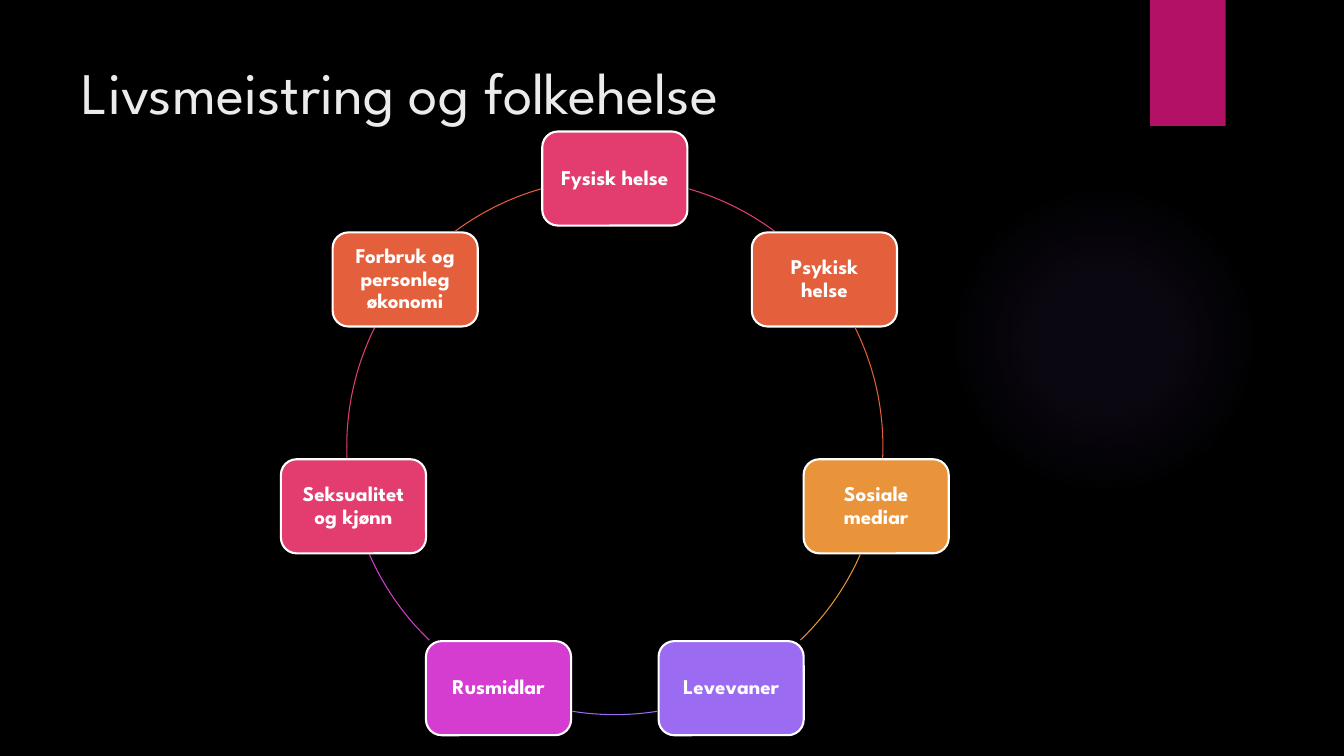
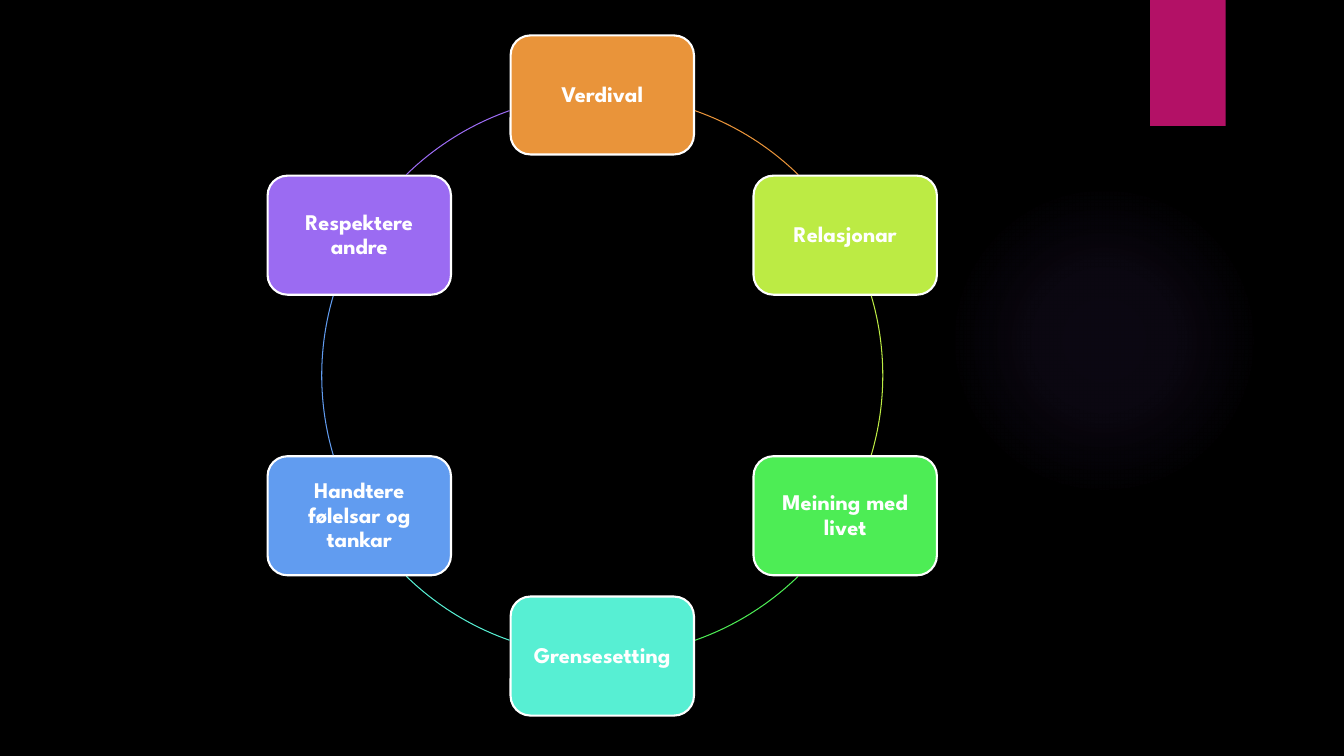
import itertools
import math

import lxml.etree
import pptx
import pptx.dml.color
import pptx.enum.shapes
import pptx.enum.text
import pptx.oxml
import pptx.oxml.ns
import pptx.util

Pt = pptx.util.Pt
SHAPE = pptx.enum.shapes.MSO_SHAPE
FONT = "League Spartan"
BLACK, WHITE, TITLE_COLOUR, BAND = "000000", "FFFFFF", "EBEBEB", "B31166"
PINK, RED, ORANGE, VIOLET, MAGENTA = "E33D6F", "E45F3C", "E9943A", "9B6BF2", "D53DD0"
LIME, GREEN, TURQUOISE, BLUE = "BCEB44", "4DED55", "57EFD3", "619CF0"
GLOW_STOPS = [(0, 7), (36, 6), (69, 0)]
TITLE_ONLY, BLANK = 5, 6

CYCLES = [
    {
        "title": "Livsmeistring og folkehelse",
        "centre": (439.2, 319),
        "radius": 191.5,
        "box": (103.7, 67.2),
        "inset": 7.5,
        "size": 15,
        "topics": [
            ("Fysisk helse", PINK),
            ("Psykisk helse", RED),
            ("Sosiale mediar", ORANGE),
            ("Levevaner", VIOLET),
            ("Rusmidlar", MAGENTA),
            ("Seksualitet og kjønn", PINK),
            ("Forbruk og personleg økonomi", RED),
        ],
    },
    {
        "title": None,
        "centre": (430.2, 268.2),
        "radius": 200.4,
        "box": (131, 85),
        "inset": 9,
        "size": 16,
        "topics": [
            ("Verdival", ORANGE),
            ("Relasjonar", LIME),
            ("Meining med livet", GREEN),
            ("Grensesetting", TURQUOISE),
            ("Handtere følelsar og tankar", BLUE),
            ("Respektere andre", VIOLET),
        ],
    },
]


def colour(value):
    return pptx.dml.color.RGBColor.from_string(value)


def add_shape(slide, kind, left, top, width, height, fill=None, line=None, weight=0):
    shape = slide.shapes.add_shape(kind, Pt(left), Pt(top), Pt(width), Pt(height))
    shape.shadow.inherit = False
    if fill:
        shape.fill.solid()
        shape.fill.fore_color.rgb = colour(fill)
    else:
        shape.fill.background()
    if line:
        shape.line.color.rgb = colour(line)
        shape.line.width = Pt(weight)
    else:
        shape.line.fill.background()
    return shape


def add_text(frame, text, size, text_colour, bold=False):
    paragraph = frame.paragraphs[0]
    run = paragraph.add_run()
    run.text = text
    run.font.name = FONT
    run.font.size = Pt(size)
    run.font.bold = bold
    run.font.color.rgb = colour(text_colour)
    return paragraph


def fill_glow(shape):
    stops = "".join(
        f'<a:gs pos="{position * 1000}"><a:srgbClr val="{VIOLET}">'
        f'<a:alpha val="{alpha * 1000}"/></a:srgbClr></a:gs>'
        for position, alpha in GLOW_STOPS
    )
    gradient = pptx.oxml.parse_xml(
        f'<a:gradFill {pptx.oxml.ns.nsdecls("a")}><a:gsLst>{stops}</a:gsLst>'
        '<a:path path="circle"><a:fillToRect l="50000" t="50000" r="50000" b="50000"/>'
        "</a:path></a:gradFill>"
    )
    properties = shape.element.spPr
    properties.replace(properties.find(pptx.oxml.ns.qn("a:noFill")), gradient)


def decorate_master(master, slide):
    master.background.fill.solid()
    master.background.fill.fore_color.rgb = colour(BLACK)
    glow = add_shape(slide, SHAPE.OVAL, 677.5, 131.8, 221.8, 221.8)
    fill_glow(glow)
    band = add_shape(slide, SHAPE.RECTANGLE, 821.5, 0, 54, 90, BAND)
    for index, shape in enumerate((glow, band), start=2):
        master.shapes.element.insert(index, shape.element)


def add_title(slide, text):
    title = slide.shapes.title
    title.left, title.top, title.width, title.height = Pt(51), Pt(36), Pt(741), Pt(58)
    title.text_frame.vertical_anchor = pptx.enum.text.MSO_ANCHOR.BOTTOM
    paragraph = add_text(title.text_frame, text, 42, TITLE_COLOUR)
    paragraph.alignment = pptx.enum.text.PP_ALIGN.LEFT


def add_topic(slide, cycle, angle, text, fill):
    width, height = cycle["box"]
    left = cycle["centre"][0] + cycle["radius"] * math.cos(math.radians(angle)) - width / 2
    top = cycle["centre"][1] + cycle["radius"] * math.sin(math.radians(angle)) - height / 2
    box = add_shape(slide, SHAPE.ROUNDED_RECTANGLE, left, top, width, height, fill, WHITE, 1.5)
    frame = box.text_frame
    frame.word_wrap = True
    frame.vertical_anchor = pptx.enum.text.MSO_ANCHOR.MIDDLE
    frame.margin_left = frame.margin_right = Pt(cycle["inset"])
    frame.margin_top = frame.margin_bottom = Pt(cycle["inset"])
    paragraph = add_text(frame, text, cycle["size"], WHITE, True)
    paragraph.alignment = pptx.enum.text.PP_ALIGN.CENTER
    paragraph.line_spacing = 0.9


def leave_box(cycle, angle, direction):
    start = math.radians(angle)
    for step in itertools.count(1):
        end_angle = angle + direction * step / 10
        end = math.radians(end_angle)
        across = cycle["radius"] * abs(math.cos(end) - math.cos(start))
        down = cycle["radius"] * abs(math.sin(end) - math.sin(start))
        if across > cycle["box"][0] / 2 + 0.7 or down > cycle["box"][1] / 2 + 0.7:
            return end_angle


def add_link(slide, cycle, angle, next_angle, line):
    radius = cycle["radius"]
    left, top = (middle - radius for middle in cycle["centre"])
    arc = add_shape(slide, SHAPE.ARC, left, top, 2 * radius, 2 * radius, None, line, 0.75)
    ends = leave_box(cycle, angle, 1), leave_box(cycle, next_angle, -1)
    for index, end in enumerate(ends):
        arc.adjustments[index] = end % 360 * 0.6


def add_cycle(slide, cycle):
    step = 360 / len(cycle["topics"])
    for index, (text, fill) in enumerate(cycle["topics"]):
        angle = index * step - 90
        add_topic(slide, cycle, angle, text, fill)
        add_link(slide, cycle, angle, angle + step, fill)


def main():
    presentation = pptx.Presentation()
    presentation.slide_width, presentation.slide_height = Pt(960), Pt(540)
    for number, cycle in enumerate(CYCLES):
        layout = presentation.slide_layouts[TITLE_ONLY if cycle["title"] else BLANK]
        slide = presentation.slides.add_slide(layout)
        if number == 0:
            decorate_master(presentation.slide_master, slide)
        if cycle["title"]:
            add_title(slide, cycle["title"])
        add_cycle(slide, cycle)
    presentation.save("out.pptx")


if __name__ == "__main__":
    main()
